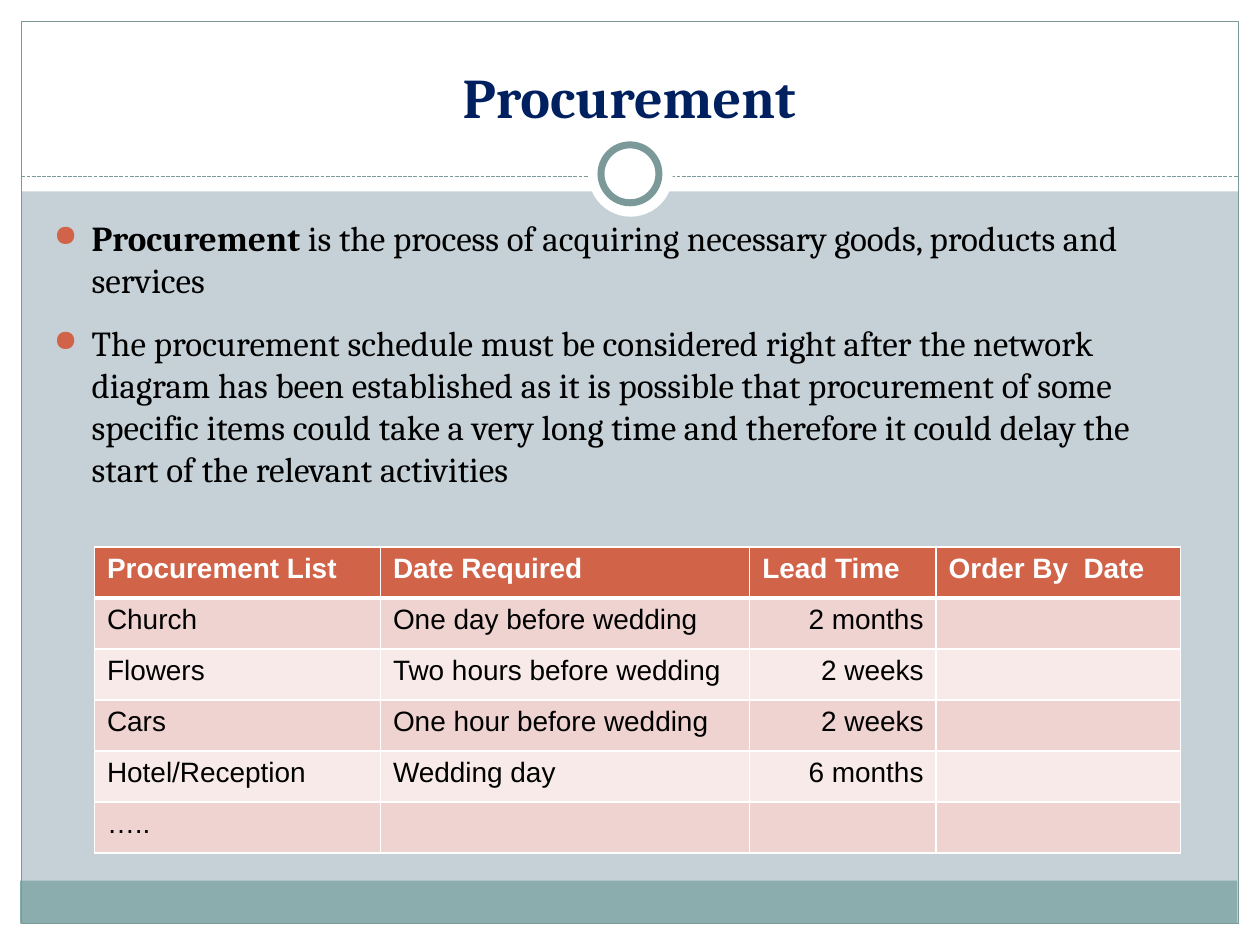
import pptx
import pptx.util
import pptx.dml.color
import pptx.enum.dml
import pptx.enum.shapes
import pptx.enum.text
import pptx.oxml
import pptx.oxml.ns
from pptx.util import Inches

Pt = pptx.util.Pt
Kind = pptx.enum.shapes.MSO_SHAPE
Align = pptx.enum.text.PP_ALIGN
NS = pptx.oxml.ns.nsdecls("a")


def paint(target, color):
    """Give a fill a solid colour."""
    target.solid()
    target.fore_color.rgb = pptx.dml.color.RGBColor.from_string(color)


def write(para, text, font, size, color, bold=False):
    run = para.add_run()
    run.text = text
    run.font.name = font
    run.font.size = Pt(size)
    run.font.bold = bold
    paint(run.font.fill, color)


deck = pptx.Presentation()
deck.slide_width, deck.slide_height = Inches(10), Inches(7.5)
slide = deck.slides.add_slide(deck.slide_layouts[5])
shapes = slide.shapes
paint(slide.background.fill, "C5D1D7")

# Frame: white margins, footer band, outline
bands = [
    (0, 7.33, 10, 0.17, "FFFFFF"),
    (0, 0, 10, 1.52, "FFFFFF"),
    (0, 0, 0.17, 7.5, "FFFFFF"),
    (9.83, 0, 0.17, 7.5, "FFFFFF"),
    (0.16, 6.99, 9.66, 0.34, "8CADAE"),
]
for left, top, width, height, color in bands:
    band = shapes.add_shape(Kind.RECTANGLE, Inches(left), Inches(top), Inches(width), Inches(height))
    band.shadow.inherit = False
    paint(band.fill, color)
    band.line.fill.background()

frame = shapes.add_shape(Kind.RECTANGLE, Inches(0.17), Inches(0.17), Inches(9.66), Inches(7.16))
frame.shadow.inherit = False
frame.fill.background()
paint(frame.line.fill, "7C999A")
frame.line.width = Pt(0.75)

# Dashed divider with the ring on it
rule = shapes.add_connector(
    pptx.enum.shapes.MSO_CONNECTOR.STRAIGHT, Inches(0.17), Inches(1.4), Inches(9.83), Inches(1.4))
paint(rule.line.fill, "7C999A")
rule.line.width = Pt(0.75)
rule.line.dash_style = pptx.enum.dml.MSO_LINE.SQUARE_DOT
rule.element.spPr.append(pptx.oxml.parse_xml(f"<a:effectLst {NS}/>"))

for left, top, size, edge in [(4.67, 1.05, 0.67, 0), (4.77, 1.15, 0.46, 4)]:
    disc = shapes.add_shape(Kind.OVAL, Inches(left), Inches(top), Inches(size), Inches(size))
    disc.shadow.inherit = False
    paint(disc.fill, "FFFFFF")
    if edge:
        paint(disc.line.fill, "7C999A")
        disc.line.width = Pt(edge)
    else:
        disc.line.fill.background()

# Title, brought in front of the white band
title = shapes.title
title.left, title.top = Inches(0.33), Inches(0.25)
title.width, title.height = Inches(9.33), Inches(0.83)
title.text_frame.vertical_anchor = pptx.enum.text.MSO_ANCHOR.BOTTOM
head = title.text_frame.paragraphs[0]
head.alignment = Align.CENTER
write(head, "Procurement", "Cambria", 32, "002060", True)
shapes.element.append(title.element)

# Bullets
points = [
    [("Procurement", True),
     (" is the process of acquiring necessary goods, products and services", False)],
    [("The procurement schedule must be considered right after the network diagram has been "
      "established as it is possible that procurement of some specific items could take a very "
      "long time and therefore it could delay the start of the relevant activities", False)],
]
marks = [
    '<a:buClr {}><a:srgbClr val="D16349"/></a:buClr>',
    '<a:buSzPct {} val="85000"/>',
    '<a:buChar {} char="●"/>',
]
body = shapes.add_textbox(Inches(0.33), Inches(1.67), Inches(9.24), Inches(2.6)).text_frame
body.word_wrap = True
for num, point in enumerate(points):
    para = body.add_paragraph() if num else body.paragraphs[0]
    para.space_after = Pt(12)
    for text, bold in point:
        write(para, text, "Cambria", 20, "000000", bold)
    props = para._p.get_or_add_pPr()
    props.set("marL", str(Inches(0.3)))
    props.set("indent", str(Inches(-0.3)))
    for mark in marks:
        props.append(pptx.oxml.parse_xml(mark.format(NS)))

# Procurement table
rows = [
    ("Procurement List", "Date Required", "Lead Time", "Order By  Date"),
    ("Church", "One day before wedding", "2 months", ""),
    ("Flowers", "Two hours before wedding", "2 weeks", ""),
    ("Cars", "One hour before wedding", "2 weeks", ""),
    ("Hotel/Reception", "Wedding day", "6 months", ""),
    ("…..", "", "", ""),
]
table = shapes.add_table(
    len(rows), 4, Inches(0.75), Inches(4.34), Inches(8.62), Inches(2.43)).table
for col, width in zip(table.columns, (2.27, 2.93, 1.48, 1.94)):
    col.width = Inches(width)

for r, row in enumerate(rows):
    for c, text in enumerate(row):
        cell = table.cell(r, c)
        paint(cell.fill, "D16349" if r == 0 else "EED3D0" if r % 2 else "F7EAE9")
        if text:
            para = cell.text_frame.paragraphs[0]
            if r and c == 2:
                para.alignment = Align.RIGHT
            write(para, text, "Arial", 16, "000000" if r else "FFFFFF", r == 0)
        props = cell._tc.get_or_add_tcPr()
        for spot, side in enumerate("LRTB"):
            thick = (r, side) in [(0, "B"), (1, "T")]
            props.insert(spot, pptx.oxml.parse_xml(
                f'<a:ln{side} {NS} w="{Pt(3 if thick else 1)}"><a:solidFill>'
                f'<a:srgbClr val="FFFFFF"/></a:solidFill></a:ln{side}>'))

deck.save("out.pptx")
